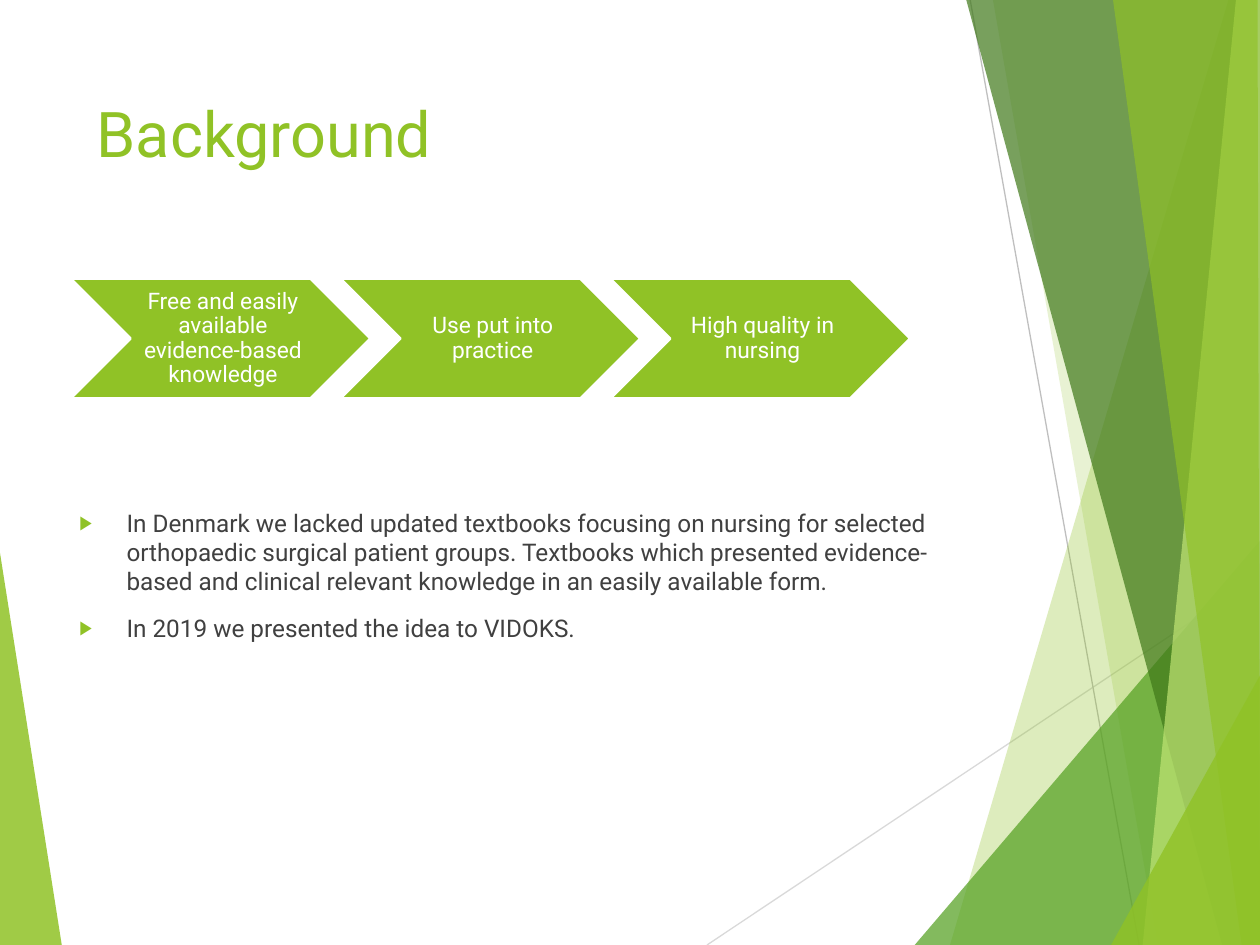
from dataclasses import dataclass

from lxml.etree import SubElement
from pptx import Presentation
from pptx.dml.color import RGBColor
from pptx.enum.shapes import MSO_CONNECTOR, MSO_SHAPE
from pptx.enum.text import MSO_ANCHOR, PP_ALIGN
from pptx.oxml.ns import qn
from pptx.util import Pt


@dataclass(frozen=True)
class Theme:
    font: str = "Roboto"
    lime: str = "90C226"
    green: str = "54A021"
    forest: str = "3F7819"
    pale: str = "C0E474"
    white: str = "FFFFFF"
    body: str = "404040"
    light_rule: str = "D9D9D9"
    dark_rule: str = "BFBFBF"
    title_size: float = 36
    step_size: float = 13
    body_size: float = 13.9


THEME = Theme()

LEFT_FACET = (THEME.lime, 85, [(0, 316), (35.3, 540), (0, 540)])
RULES = [
    (THEME.light_rule, (404, 540), (720, 329)),
    (THEME.dark_rule, (554.4, 0), (650.9, 540)),
]
RIGHT_FACETS = [
    (THEME.lime, 30, [(702, 0), (542.9, 540), (720, 540), (720, 0)]),
    (THEME.lime, 20, [(567.4, 0), (661.7, 540), (720, 540), (720, 0)]),
    (THEME.green, 72, [(522.7, 540), (720, 309), (720, 540)]),
    (THEME.forest, 70, [(552.2, 0), (698.4, 540), (720, 540), (720, 0)]),
    (THEME.pale, 70, [(706.3, 0), (653, 540), (720, 540), (720, 0)]),
    (THEME.lime, 65, [(636, 0), (709.5, 540), (720, 540), (718.6, 0)]),
    (THEME.lime, 80, [(634.9, 540), (720, 386), (720, 540)]),
]
STEPS = [
    "Free and easily available evidence-based knowledge",
    "Use put into practice",
    "High quality in nursing",
]
POINTS = [
    "In Denmark we lacked updated textbooks focusing on nursing for selected "
    "orthopaedic surgical patient groups. Textbooks which presented "
    "evidence-based and clinical relevant knowledge in an easily available form.",
    "In 2019 we presented the idea to VIDOKS.",
]


def apply_format(target, values):
    for name, value in values.items():
        setattr(target, name, value)


def set_fill(shape, color, opacity=100):
    shape.shadow.inherit = False
    shape.fill.solid()
    shape.fill.fore_color.rgb = RGBColor.from_string(color)
    if opacity < 100:
        color_element = shape.fill._xPr.find(".//" + qn("a:srgbClr"))
        SubElement(color_element, qn("a:alpha"), val=str(opacity * 1000))


def add_facet(slide, color, opacity, corners):
    builder = slide.shapes.build_freeform(
        Pt(corners[0][0]), Pt(corners[0][1]), scale=1.0
    )
    builder.add_line_segments([(Pt(x), Pt(y)) for x, y in corners[1:]])
    shape = builder.convert_to_shape()
    set_fill(shape, color, opacity)
    shape.line.fill.background()


def add_rule(slide, color, start, end):
    ends = [Pt(value) for value in (*start, *end)]
    connector = slide.shapes.add_connector(MSO_CONNECTOR.STRAIGHT, *ends)
    connector.line.color.rgb = RGBColor.from_string(color)
    connector.line.width = Pt(0.75)
    SubElement(connector._element.spPr, qn("a:effectLst"))


def set_frame(frame, anchor, left, top, right, bottom):
    apply_format(frame, {
        "word_wrap": True,
        "vertical_anchor": anchor,
        "margin_left": Pt(left),
        "margin_top": Pt(top),
        "margin_right": Pt(right),
        "margin_bottom": Pt(bottom),
    })


def write_paragraph(paragraph, text, size, color, **values):
    apply_format(paragraph, values)
    run = paragraph.add_run()
    run.text = text
    apply_format(run.font, {"name": THEME.font, "size": Pt(size)})
    run.font.color.rgb = RGBColor.from_string(color)


def add_bullet(paragraph):
    properties = paragraph._p.get_or_add_pPr()
    properties.set("marL", str(Pt(27)))
    properties.set("indent", str(Pt(-27)))
    bullet_color = SubElement(properties, qn("a:buClr"))
    SubElement(bullet_color, qn("a:srgbClr"), val=THEME.lime)
    SubElement(properties, qn("a:buSzPct"), val="80000")
    SubElement(properties, qn("a:buFont"), typeface=THEME.font)
    SubElement(properties, qn("a:buChar"), char="▶")


def add_title(slide, text):
    box = slide.shapes.add_textbox(Pt(48.2), Pt(48.2), Pt(500), Pt(104))
    set_frame(box.text_frame, MSO_ANCHOR.TOP, 7.2, 6, 7.2, 3.6)
    write_paragraph(
        box.text_frame.paragraphs[0], text, THEME.title_size, THEME.lime
    )


def add_step(slide, index, text):
    left = 40.3 + index * 154.2
    shape = slide.shapes.add_shape(
        MSO_SHAPE.CHEVRON, Pt(left), Pt(159.2), Pt(171.4), Pt(68.5)
    )
    set_fill(shape, THEME.lime)
    shape.line.color.rgb = RGBColor.from_string(THEME.white)
    shape.line.width = Pt(1.5)
    set_frame(shape.text_frame, MSO_ANCHOR.MIDDLE, 4, 1.4, 1.4, 1.4)
    write_paragraph(
        shape.text_frame.paragraphs[0], text, THEME.step_size, THEME.white,
        alignment=PP_ALIGN.CENTER, line_spacing=0.9,
    )


def add_bullets(slide, texts):
    box = slide.shapes.add_textbox(Pt(40.3), Pt(244.8), Pt(507.6), Pt(167.8))
    frame = box.text_frame
    set_frame(frame, MSO_ANCHOR.TOP, 5, 45.7, 5, 2.9)
    for index, text in enumerate(texts):
        paragraph = frame.add_paragraph() if index else frame.paragraphs[0]
        write_paragraph(
            paragraph, text, THEME.body_size, THEME.body,
            space_before=Pt(10 if index else 0),
        )
        add_bullet(paragraph)


def main():
    presentation = Presentation()
    apply_format(
        presentation, {"slide_width": Pt(720), "slide_height": Pt(540)}
    )
    slide = presentation.slides.add_slide(presentation.slide_layouts[6])
    add_facet(slide, *LEFT_FACET)
    for rule in RULES:
        add_rule(slide, *rule)
    for facet in RIGHT_FACETS:
        add_facet(slide, *facet)
    add_title(slide, "Background")
    for index, text in enumerate(STEPS):
        add_step(slide, index, text)
    add_bullets(slide, POINTS)
    presentation.save("out.pptx")


if __name__ == "__main__":
    main()
